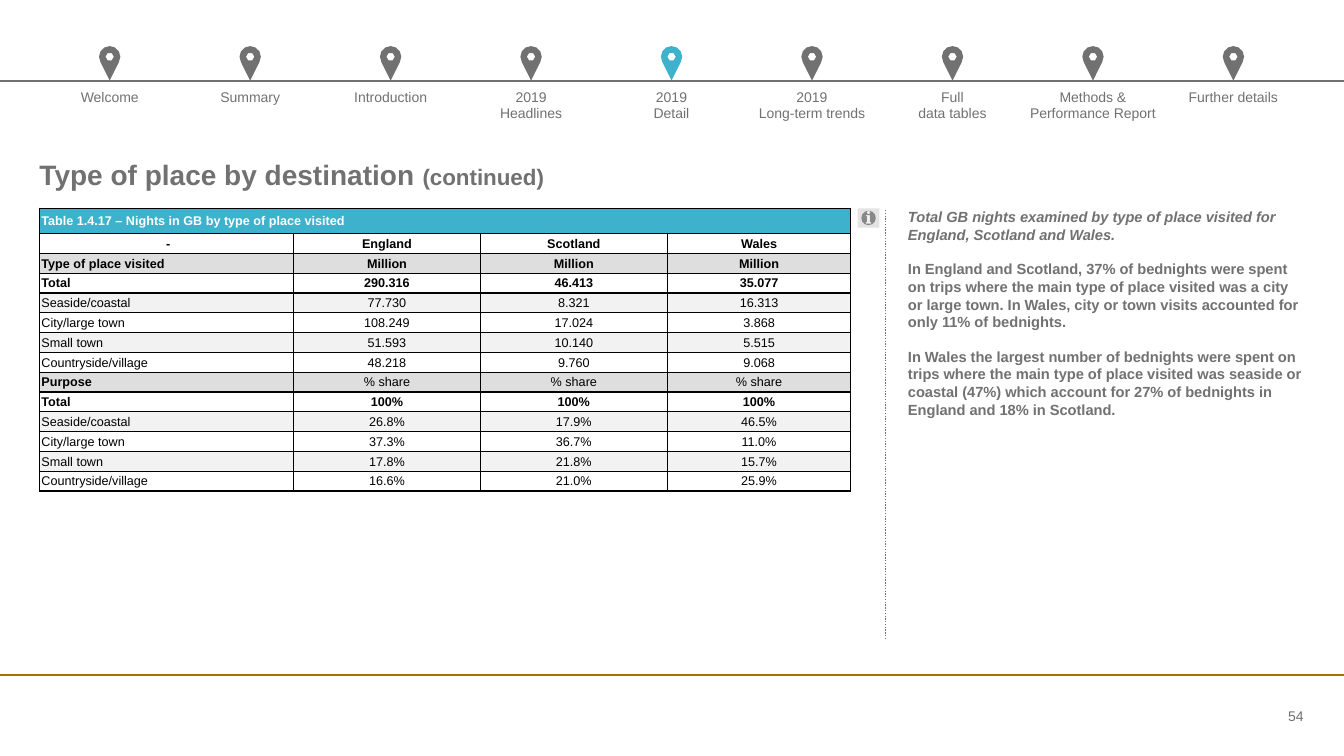
from math import cos, radians, sin

from lxml import etree
from pptx import Presentation
from pptx.dml.color import RGBColor
from pptx.enum.dml import MSO_LINE
from pptx.enum.shapes import MSO_CONNECTOR, MSO_SHAPE
from pptx.enum.text import MSO_ANCHOR, PP_ALIGN
from pptx.oxml.ns import qn
from pptx.util import Inches, Pt

LEFT, MID, RIGHT = PP_ALIGN.LEFT, PP_ALIGN.CENTER, PP_ALIGN.RIGHT
TOP, CENTRE, BASE = MSO_ANCHOR.TOP, MSO_ANCHOR.MIDDLE, MSO_ANCHOR.BOTTOM
STRAIGHT = MSO_CONNECTOR.STRAIGHT
DOTS = MSO_LINE.ROUND_DOT
INFO = MSO_SHAPE.ACTION_BUTTON_INFORMATION

COLORS = {
    "grey": "717171", "teal": "3EB1CC", "gold": "9E7500", "black": "000000",
    "white": "FFFFFF", "band": "DEDEDE", "pale": "F2F2F2", "button": "E3E3E3",
}
COLS, ROWS = 160, 90
WIDTH, HEIGHT = Inches(13.33), Inches(7.5)
MARGIN, SPAN = 4.7, 150.5

STEPS = [
    ["Welcome"], ["Summary"], ["Introduction"], ["2019", "Headlines"],
    ["2019", "Detail"], ["2019", "Long-term trends"], ["Full", "data tables"],
    ["Methods & Performance Report"], ["Further details"],
]
ACTIVE = 4

# fill, bold label, bold values, cells
NIGHTS = [
    ("teal", True, True, ["Table 1.4.17 – Nights in GB by type of place visited"]),
    (None, True, True, [" -", "England", "Scotland", "Wales"]),
    ("band", True, True, ["Type of place visited"] + ["Million"] * 3),
    (None, True, True, ["Total", "290.316", "46.413", "35.077"]),
    ("pale", False, False, ["Seaside/coastal", "77.730", "8.321", "16.313"]),
    (None, False, False, ["City/large town", "108.249", "17.024", "3.868"]),
    ("pale", False, False, ["Small town", "51.593", "10.140", "5.515"]),
    (None, False, False, ["Countryside/village", "48.218", "9.760", "9.068"]),
    ("band", True, False, ["Purpose"] + ["% share"] * 3),
    (None, True, True, ["Total"] + ["100%"] * 3),
    ("pale", False, False, ["Seaside/coastal", "26.8%", "17.9%", "46.5%"]),
    (None, False, False, ["City/large town", "37.3%", "36.7%", "11.0%"]),
    ("pale", False, False, ["Small town", "17.8%", "21.8%", "15.7%"]),
    (None, False, False, ["Countryside/village", "16.6%", "21.0%", "25.9%"]),
]

NOTES = [
    [("Total GB nights examined by type of place visited for England, "
      "Scotland and Wales.", {"italic": True})],
    "In England and Scotland, 37% of bednights were spent on trips where the "
    "main type of place visited was a city or large town. In Wales, city or "
    "town visits accounted for only 11% of bednights.",
    "In Wales the largest number of bednights were spent on trips where the "
    "main type of place visited was seaside or coastal (47%) which account "
    "for 27% of bednights in England and 18% in Scotland.",
]


def rgb(name):
    return RGBColor.from_string(COLORS[name])


def write(frame, paras, size=10, color="grey", bold=False, align=LEFT, gap=0):
    """Fill a frame; a paragraph is a string or a list of (text, font changes)."""
    for i, para in enumerate(paras):
        line = frame.paragraphs[0] if i == 0 else frame.add_paragraph()
        line.alignment = align
        if i:
            line.space_before = Pt(gap)
        for text, change in [(para, {})] if isinstance(para, str) else para:
            run = line.add_run()
            run.text = text
            font = run.font
            font.name = "Arial"
            font.size = Pt(change.get("size", size))
            font.bold = bold
            font.italic = change.get("italic", False)
            font.color.rgb = rgb(color)


def frame_cell(cell, color):
    """Draw a thin border on all four sides; call before setting the fill."""
    props = cell._tc.get_or_add_tcPr()
    for side in ("a:lnL", "a:lnR", "a:lnT", "a:lnB"):
        edge = etree.SubElement(props, qn(side), w=str(Pt(1)))
        solid = etree.SubElement(edge, qn("a:solidFill"))
        etree.SubElement(solid, qn("a:srgbClr"), val=COLORS[color])


class Board:
    """A slide measured in columns and rows of a 160 by 90 grid."""

    def __init__(self, slide):
        self.slide = slide
        self.shapes = slide.shapes

    def x(self, cols):
        return round(cols * WIDTH / COLS)

    def y(self, rows):
        return round(rows * HEIGHT / ROWS)

    def box(self, left, top, wide, high):
        return self.x(left), self.y(top), self.x(wide), self.y(high)

    def text(self, area, paras, anchor=TOP, **style):
        frame = self.shapes.add_textbox(*self.box(*area)).text_frame
        frame.word_wrap = True
        frame.vertical_anchor = anchor
        frame.margin_left = frame.margin_right = 0
        frame.margin_top = frame.margin_bottom = 0
        write(frame, paras, **style)

    def line(self, x1, y1, x2, y2, color, weight, dash=None):
        rule = self.shapes.add_connector(
            STRAIGHT, self.x(x1), self.y(y1), self.x(x2), self.y(y2))
        rule.line.color.rgb = rgb(color)
        rule.line.width = Pt(weight)
        if dash:
            rule.line.dash_style = dash
        etree.SubElement(rule._element.spPr, qn("a:effectLst"))

    def paint(self, shape, color):
        shape.shadow.inherit = False
        shape.fill.solid()
        shape.fill.fore_color.rgb = rgb(color)
        shape.line.fill.background()

    def button(self, kind, area, color):
        self.paint(self.shapes.add_shape(kind, *self.box(*area)), color)

    def pin(self, mid, tip, color):
        """Draw a map pin with a round hole, its point at (mid, tip)."""
        head = tip - 2.84

        def arc(radius, start, stop, step):
            return [(self.x(mid + radius * cos(radians(a))),
                     self.y(head + radius * sin(radians(a))))
                    for a in range(start, stop + 1, step)]

        dome = arc(1.27, 150, 390, 30)
        hole = arc(0.5, 0, 300, 60)
        path = self.shapes.build_freeform(*dome[0])
        path.add_line_segments(dome[1:] + [(self.x(mid), self.y(tip))])
        path.move_to(*hole[0])
        path.add_line_segments(hole[1:])
        self.paint(path.convert_to_shape(), color)

    def grid(self, left, top, wides, highs):
        table = self.shapes.add_table(
            len(highs), len(wides),
            *self.box(left, top, sum(wides), sum(highs))).table
        table.first_row = table.horz_banding = False
        for col, wide in zip(table.columns, wides):
            col.width = self.x(wide)
        for row, high in zip(table.rows, highs):
            row.height = self.y(high)
        return table

    def cell(self, cell, paras, fill=None, border=None, pad=0, anchor=TOP, **style):
        cell.margin_left = cell.margin_right = Inches(pad)
        cell.margin_top = Inches(pad / 2)
        cell.margin_bottom = 0
        cell.vertical_anchor = anchor
        if border:
            frame_cell(cell, border)
        if fill:
            cell.fill.solid()
            cell.fill.fore_color.rgb = rgb(fill)
        else:
            cell.fill.background()
        write(cell.text_frame, paras, **style)


def main():
    deck = Presentation()
    deck.slide_width, deck.slide_height = WIDTH, HEIGHT
    board = Board(deck.slides.add_slide(deck.slide_layouts[6]))

    board.line(0, 80.4, COLS, 80.4, "gold", 1.5)
    step = SPAN / len(STEPS)
    menu = board.grid(MARGIN, 10.75, [step] * len(STEPS), [4.2])
    for i, label in enumerate(STEPS):
        board.cell(menu.cell(0, i), label, align=MID)
        board.pin(MARGIN + (i + 0.5) * step, 9.6, "teal" if i == ACTIVE else "grey")
    board.line(0, 9.6, COLS, 9.6, "grey", 1.25)

    board.text((MARGIN, 18.5, SPAN, 4.2),
               [[("Type of place by destination ", {}), ("(continued)", {"size": 16})]],
               anchor=BASE, size=20, bold=True)

    nights = board.grid(MARGIN, 24.8, [30.24, 22.25, 22.25, 21.86],
                        [3] + [2.36] * (len(NIGHTS) - 1))
    nights.cell(0, 0).merge(nights.cell(0, 3))
    for r, (fill, head, body, words) in enumerate(NIGHTS):
        for c in range(4):
            board.cell(nights.cell(r, c), words[c:c + 1], fill=fill, border="black",
                       pad=0.02, anchor=CENTRE, size=9, bold=body if c else head,
                       color="black" if r else "white",
                       align=MID if c or r == 1 else LEFT)

    board.text((108.1, 24.8, 47.2, 50.2), NOTES, size=10.5, bold=True, gap=12)
    board.line(105.4, 25, 105.4, 76.1, "grey", 1, DOTS)
    board.button(INFO, (102.1, 24.8, 2.6, 2.3), "button")
    board.text((142.4, 83.9, 12.8, 2.6), ["54"], anchor=CENTRE, align=RIGHT)
    deck.save("out.pptx")


if __name__ == "__main__":
    main()
